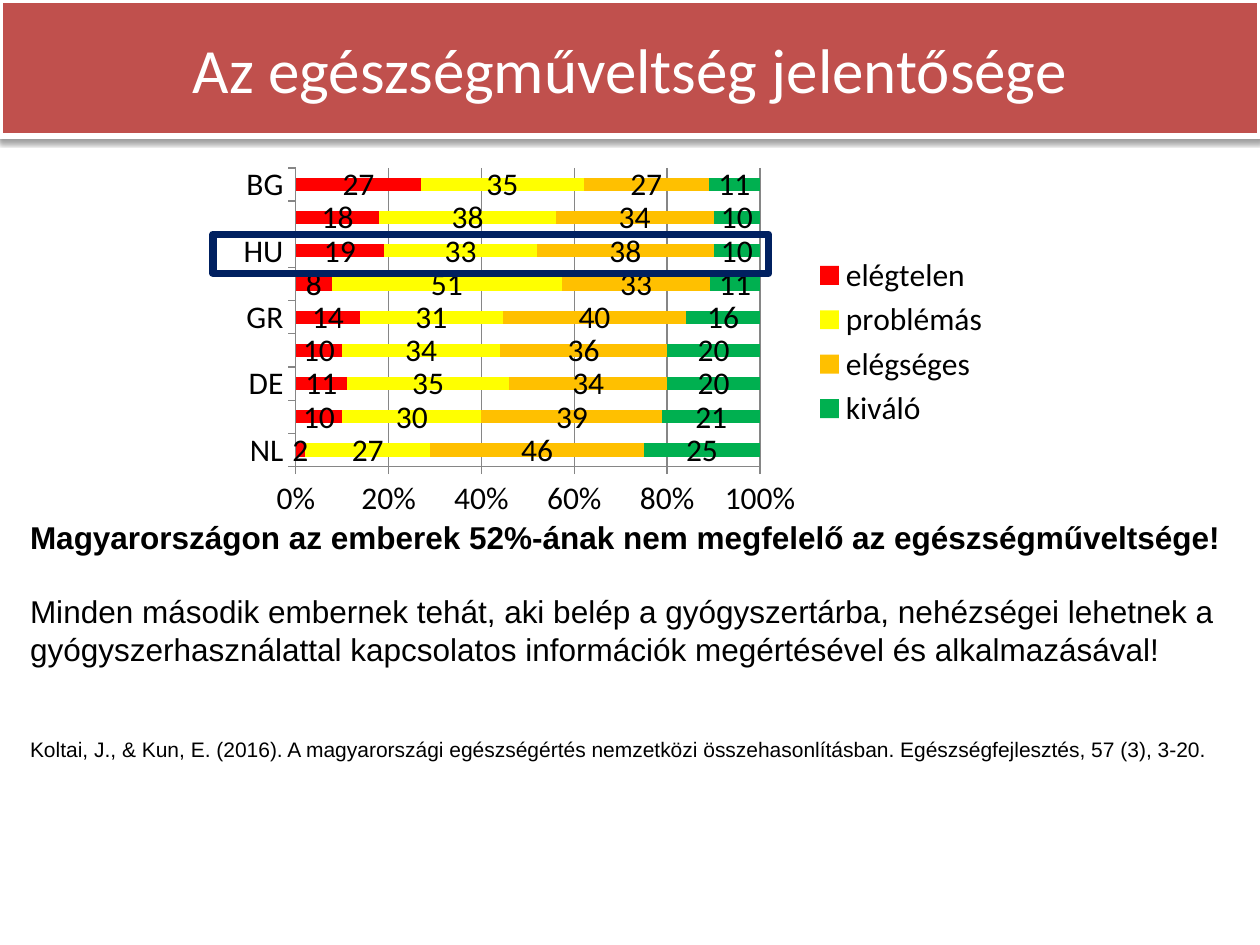
from dataclasses import dataclass

from lxml.etree import SubElement
from pptx import Presentation
from pptx.chart.data import CategoryChartData
from pptx.dml.color import RGBColor
from pptx.enum.chart import XL_CHART_TYPE as ChartType
from pptx.enum.chart import XL_LABEL_POSITION as LabelPosition
from pptx.enum.chart import XL_LEGEND_POSITION as LegendPosition
from pptx.enum.chart import XL_TICK_MARK as TickMark
from pptx.enum.shapes import MSO_SHAPE as Shape
from pptx.enum.text import MSO_ANCHOR as Anchor
from pptx.enum.text import PP_ALIGN as Align
from pptx.oxml import parse_xml
from pptx.oxml.ns import nsdecls, qn
from pptx.util import Inches, Pt


@dataclass(frozen=True)
class Theme:
    banner: str = "C0504D"
    white: str = "FFFFFF"
    ink: str = "000000"
    axis: str = "868686"
    frame: str = "002060"
    heading_font: str = "Calibri"
    body_font: str = "Arial"
    title_size: float = 36
    body_size: float = 18
    source_size: float = 12


COUNTRIES = ["NL", "IE", "DE", "PL", "GR", "ES", "HU", "AT", "BG"]
LEVELS = [
    ("elégtelen", "FF0000", [2, 10, 11, 10, 14, 8, 19, 18, 27]),
    ("problémás", "FFFF00", [27, 30, 35, 34, 31, 51, 33, 38, 35]),
    ("elégséges", "FFC000", [46, 39, 34, 36, 40, 33, 38, 34, 27]),
    ("kiváló", "00B050", [25, 21, 20, 20, 16, 11, 10, 10, 11]),
]
PLOT_AREA = {"x": 0.086, "y": 0.025, "w": 0.6, "h": 0.815}

BANNER_SHADOW = f"""<a:effectLst {nsdecls('a')}>
  <a:outerShdw blurRad="39370" dist="20320" dir="5400000" rotWithShape="0">
    <a:srgbClr val="000000"><a:alpha val="38000"/></a:srgbClr>
  </a:outerShdw>
</a:effectLst>"""


def apply(target, values):
    for name, value in values.items():
        setattr(target, name, value)


def inches(area):
    return [Inches(length) for length in area]


class SlideBuilder:
    def __init__(self, deck, theme):
        self.theme = theme
        self.page = deck.slides.add_slide(deck.slide_layouts[6])

    def style_font(self, font, size, name, color, bold=False):
        apply(font, {"size": Pt(size), "name": name, "bold": bold})
        font.color.rgb = RGBColor.from_string(color)

    def rectangle(self, area, line, width, fill=None):
        box = self.page.shapes.add_shape(Shape.RECTANGLE, *inches(area))
        box.shadow.inherit = False
        if fill:
            box.fill.solid()
            box.fill.fore_color.rgb = RGBColor.from_string(fill)
        else:
            box.fill.background()
        box.line.color.rgb = RGBColor.from_string(line)
        box.line.width = Pt(width)
        return box

    def banner(self, area, title):
        theme = self.theme
        box = self.rectangle(area, theme.white, 3.75, theme.banner)
        effects = box._element.spPr.find(qn("a:effectLst"))
        effects.getparent().replace(effects, parse_xml(BANNER_SHADOW))
        box.text_frame.vertical_anchor = Anchor.MIDDLE
        para = box.text_frame.paragraphs[0]
        para.alignment = Align.CENTER
        span = para.add_run()
        span.text = title
        self.style_font(span.font, theme.title_size, theme.heading_font, theme.white)

    def text(self, area, size, paragraphs, gap=0):
        """Write (words, bold) paragraphs, gap points apart."""
        frame = self.page.shapes.add_textbox(*inches(area)).text_frame
        frame.word_wrap = True
        for index, (words, bold) in enumerate(paragraphs):
            para = frame.add_paragraph() if index else frame.paragraphs[0]
            if index:
                para.space_before = Pt(gap)
            span = para.add_run()
            span.text = words
            self.style_font(span.font, size, self.theme.body_font, self.theme.ink, bold)

    def stacked_bars(self, area, categories, levels):
        theme = self.theme
        data = CategoryChartData()
        data.categories = categories
        for name, _, values in levels:
            data.add_series(name, values)
        chart = self.page.shapes.add_chart(
            ChartType.BAR_STACKED_100, *inches(area), data).chart
        self.style_font(chart.font, theme.body_size, theme.heading_font, theme.ink)
        apply(chart, {"has_title": False, "has_legend": True})
        apply(chart.legend, {"position": LegendPosition.RIGHT, "include_in_layout": False})

        plot = chart.plots[0]
        apply(plot, {"gap_width": 150, "overlap": 100,
                     "vary_by_categories": False, "has_data_labels": True})
        apply(plot.data_labels, {"show_value": True, "position": LabelPosition.CENTER})
        for series, (_, color, _) in zip(plot.series, levels):
            series.format.fill.solid()
            series.format.fill.fore_color.rgb = RGBColor.from_string(color)

        scale = chart.value_axis
        apply(scale, {"has_major_gridlines": True, "minimum_scale": 0,
                      "maximum_scale": 1, "major_unit": 0.2})
        apply(scale.tick_labels, {"number_format": "0%", "number_format_is_linked": False})
        for axis in (chart.category_axis, scale):
            apply(axis, {"major_tick_mark": TickMark.OUTSIDE,
                         "minor_tick_mark": TickMark.NONE})
        for part in (chart.category_axis, scale, scale.major_gridlines):
            part.format.line.color.rgb = RGBColor.from_string(theme.axis)
            part.format.line.width = Pt(0.75)
        self.place_plot(chart, PLOT_AREA)

    def place_plot(self, chart, fractions):
        """Fix the inner plot area as fractions of the chart."""
        plot_area = chart._chartSpace.chart.plotArea
        layout = plot_area.find(qn("c:layout"))
        if layout is None:
            layout = parse_xml(f"<c:layout {nsdecls('c')}/>")
            plot_area.insert(0, layout)
        manual = SubElement(layout, qn("c:manualLayout"))
        settings = {"layoutTarget": "inner", "xMode": "edge", "yMode": "edge", **fractions}
        for name, value in settings.items():
            SubElement(manual, qn(f"c:{name}")).set("val", str(value))


def main():
    deck = Presentation()
    apply(deck, {"slide_width": Inches(10), "slide_height": Inches(7.5)})
    theme = Theme()
    slide = SlideBuilder(deck, theme)

    slide.banner((0, 0, 10, 1.08), "Az egészségműveltség jelentősége")
    slide.text((0.14, 5.8, 10, 0.5), theme.source_size, [
        ("Koltai, J., & Kun, E. (2016). A magyarországi egészségértés nemzetközi "
         "összehasonlításban. Egészségfejlesztés, 57 (3), 3-20.", False),
    ])
    slide.text((0.14, 4.06, 9.88, 1.31), theme.body_size, [
        ("Magyarországon az emberek 52%-ának nem megfelelő az egészségműveltsége!", True),
        ("Minden második embernek tehát, aki belép a gyógyszertárba, nehézségei lehetnek a "
         "gyógyszerhasználattal kapcsolatos információk megértésével és alkalmazásával!", False),
    ], gap=21)
    slide.stacked_bars((1.82, 1.26, 6.14, 2.91), COUNTRIES, LEVELS)
    slide.rectangle((1.69, 1.86, 4.41, 0.31), theme.frame, 4.25)

    deck.save("out.pptx")


if __name__ == "__main__":
    main()
